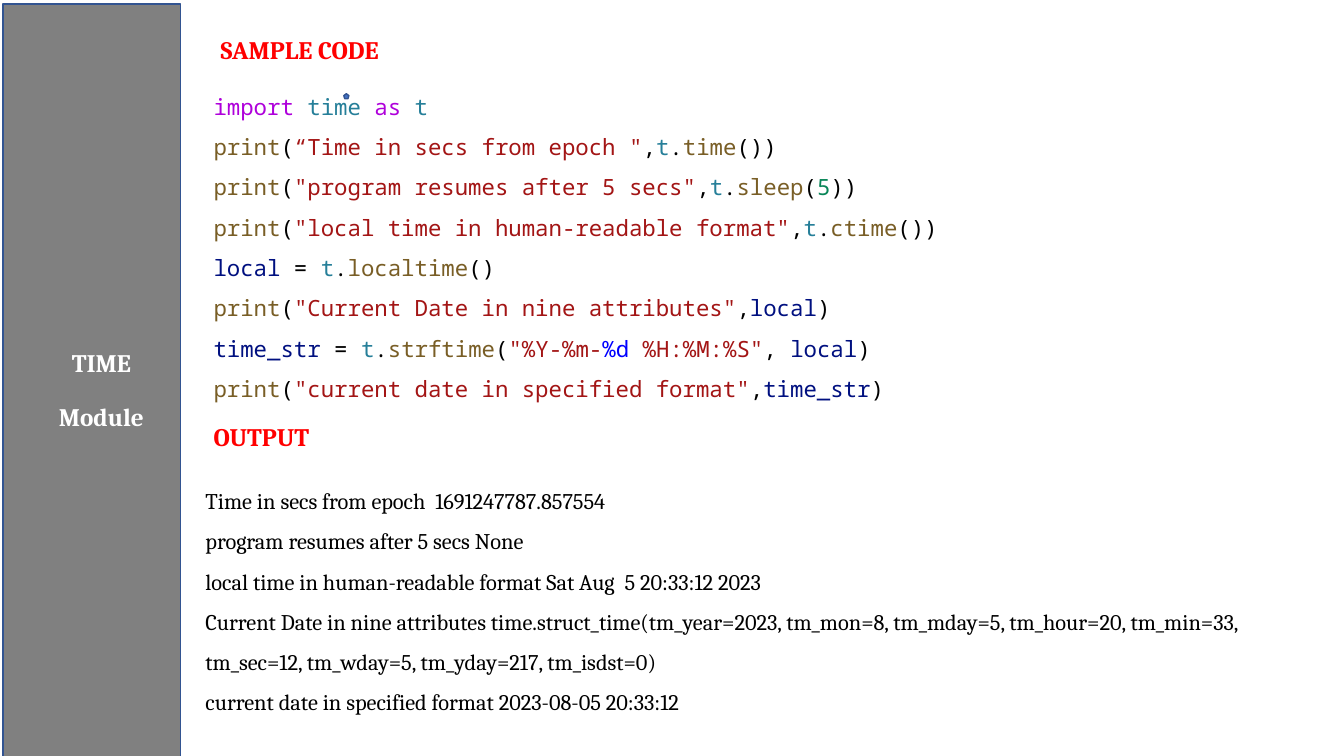
from dataclasses import dataclass, field

from pptx import Presentation
from pptx import util as u
from pptx.dml.color import RGBColor
from pptx.enum import shapes, text

WIDTH, HEIGHT = u.Inches(13.33), u.Inches(7.5)

COLORS = {
    "sidebar": "808080",
    "outline": "325491",
    "marker": "4472C4",
    "white": "FFFFFF",
    "heading": "FF0000",
    "keyword": "AF00DB",
    "module": "267F99",
    "call": "795E26",
    "plain": "000000",
    "string": "A31515",
    "number": "098658",
    "variable": "001080",
    "escape": "0000FF",
}

Token = tuple[str, str]
Line = list[Token]


@dataclass
class Box:
    left: float
    top: float
    width: float
    height: float

    def emu(self) -> tuple[int, int, int, int]:
        return (
            round(self.left * WIDTH / 100),
            round(self.top * HEIGHT / 100),
            round(self.width * WIDTH / 100),
            round(self.height * HEIGHT / 100),
        )


@dataclass
class Block:
    box: Box
    lines: list[Line]
    font: dict
    para: dict = field(default_factory=dict)


@dataclass
class Figure:
    kind: shapes.MSO_SHAPE
    box: Box
    fill: str


def set_all(target: object, values: dict) -> None:
    for name, value in values.items():
        setattr(target, name, value)


def rgb(name: str) -> RGBColor:
    return RGBColor.from_string(COLORS[name])


def write(tf, lines: list[Line], font: dict, para: dict) -> None:
    for i, line in enumerate(lines):
        p = tf.add_paragraph() if i else tf.paragraphs[0]
        set_all(p, para)
        for color, words in line:
            r = p.add_run()
            r.text = words
            set_all(r.font, font)
            r.font.color.rgb = rgb(color)


def add_figure(slide, figure: Figure):
    sp = slide.shapes.add_shape(figure.kind, *figure.box.emu())
    sp.shadow.inherit = False
    sp.fill.solid()
    sp.fill.fore_color.rgb = rgb(figure.fill)
    sp.line.color.rgb = rgb("outline")
    sp.line.width = u.Pt(1)
    return sp


def add_block(slide, block: Block) -> None:
    tf = slide.shapes.add_textbox(*block.box.emu()).text_frame
    set_all(tf, {"word_wrap": True, "auto_size": text.MSO_AUTO_SIZE.SHAPE_TO_FIT_TEXT})
    write(tf, block.lines, block.font, block.para)


def print_line(label: str, *args: Token) -> Line:
    return [("call", "print"), ("plain", "("), ("string", label), ("plain", ","), *args]


def time_call(name: str) -> Line:
    return [("module", "t"), ("plain", "."), ("call", name)]


TITLE = {"name": "Cambria", "size": u.Pt(18), "bold": True}
BODY = {"name": "Cambria", "size": u.Pt(16)}
CODE = {"name": "Noto Sans Mono", "size": u.Pt(16)}
SPACED = {"line_spacing": 1.5}
CENTERED = {**SPACED, "space_before": u.Pt(6), "alignment": text.PP_ALIGN.CENTER}

SIDEBAR = Figure(shapes.MSO_SHAPE.RECTANGLE, Box(0.23, 0.53, 13.2, 100), "sidebar")
MARKER = Figure(shapes.MSO_SHAPE.REGULAR_PENTAGON, Box(25.58, 12.4, 0.38, 0.67), "marker")

CODE_LINES = [
    [("keyword", "import "), ("module", "time "), ("keyword", "as "), ("module", "t")],
    print_line('“Time in secs from epoch "', *time_call("time"), ("plain", "())")),
    print_line('"program resumes after 5 secs"', *time_call("sleep"),
               ("plain", "("), ("number", "5"), ("plain", "))")),
    print_line('"local time in human-readable format"', *time_call("ctime"), ("plain", "())")),
    [("variable", "local"), ("plain", " = "), *time_call("localtime"), ("plain", "()")],
    print_line('"Current Date in nine attributes"', ("variable", "local"), ("plain", ")")),
    [("variable", "time_str"), ("plain", " = "), *time_call("strftime"), ("plain", "("),
     ("string", '"%Y-%m-'), ("escape", "%d"), ("string", ' %H:%M:%S"'),
     ("plain", ", "), ("variable", "local"), ("plain", ")")],
    print_line('"current date in specified format"', ("variable", "time_str"), ("plain", ")")),
]

OUTPUT = [
    "Time in secs from epoch  1691247787.857554",
    "program resumes after 5 secs None",
    "local time in human-readable format Sat Aug  5 20:33:12 2023",
    "Current Date in nine attributes time.struct_time(tm_year=2023, tm_mon=8, tm_mday=5, "
    "tm_hour=20, tm_min=33, tm_sec=12, tm_wday=5, tm_yday=217, tm_isdst=0)",
    "current date in specified format 2023-08-05 20:33:12",
]

BLOCKS = [
    Block(Box(15.15, 9.87, 84.62, 43.87), CODE_LINES, CODE, SPACED),
    Block(Box(14.55, 62, 78.39, 32.93), [[("plain", row)] for row in OUTPUT], BODY, SPACED),
    Block(Box(15.68, 3.87, 24.91, 5.33), [[("heading", "SAMPLE CODE")]], TITLE),
    Block(Box(15.15, 55.07, 10.43, 5.33), [[("heading", "OUTPUT")]], TITLE),
]


def main() -> None:
    prs = Presentation()
    set_all(prs, {"slide_width": WIDTH, "slide_height": HEIGHT})
    slide = prs.slides.add_slide(prs.slide_layouts[6])

    tf = add_figure(slide, SIDEBAR).text_frame
    tf.vertical_anchor = text.MSO_ANCHOR.MIDDLE
    write(tf, [[("white", "TIME")], [("white", "Module")]], TITLE, CENTERED)
    for p in tf.paragraphs:
        pPr = p._p.get_or_add_pPr()
        pPr.set("marL", str(u.Inches(0.19)))
        pPr.set("indent", "0")

    add_figure(slide, MARKER)
    for block in BLOCKS:
        add_block(slide, block)
    prs.save("out.pptx")


if __name__ == "__main__":
    main()
